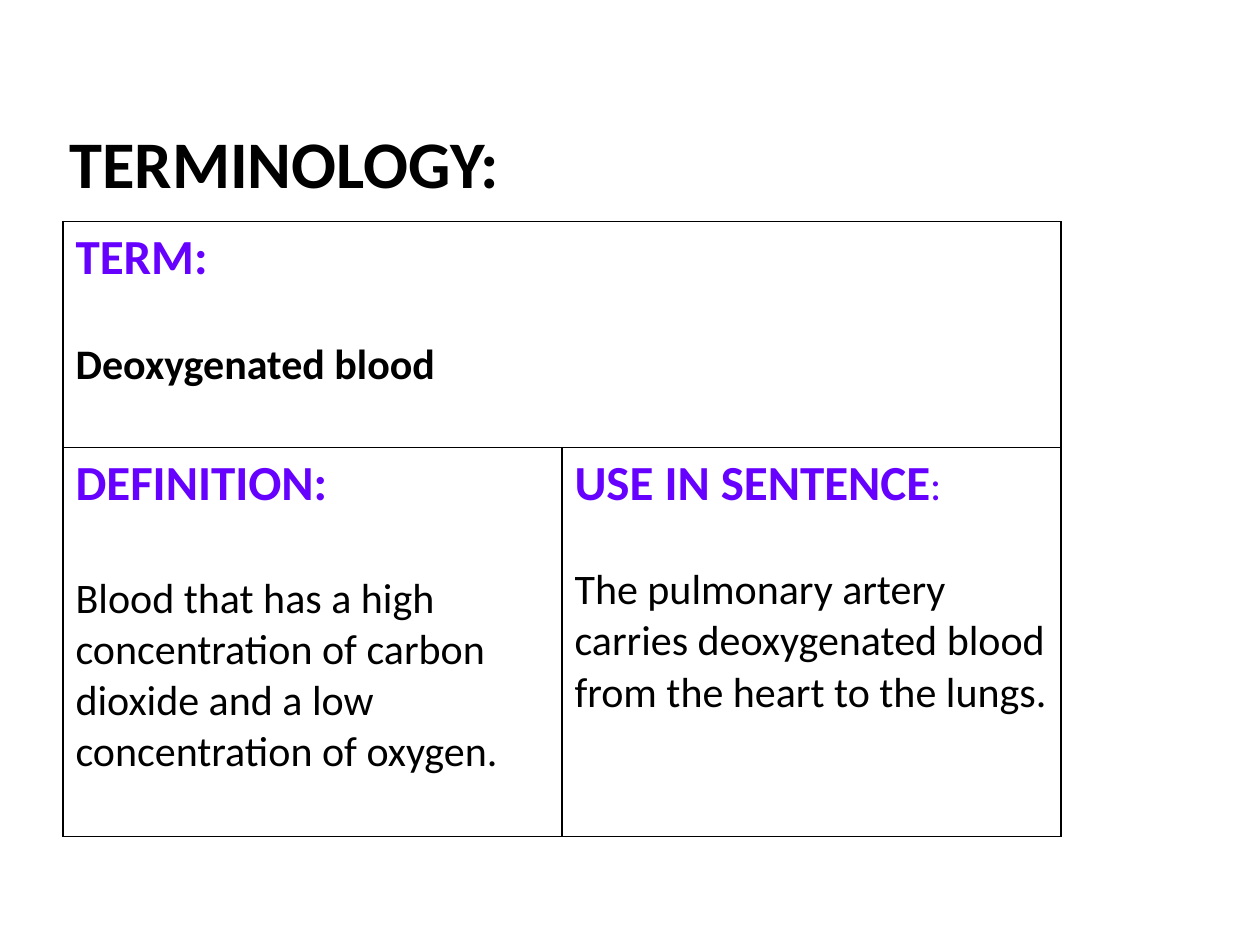
from dataclasses import dataclass

from lxml import etree
from pptx import Presentation
from pptx.dml.color import RGBColor
from pptx.enum.text import MSO_ANCHOR
from pptx.oxml.ns import qn
from pptx.util import Inches, Pt

BLACK = RGBColor(0x00, 0x00, 0x00)
VIOLET = RGBColor(0x66, 0x00, 0xFF)
FONT_NAME = "Calibri"
ANCHOR_BOTTOM = MSO_ANCHOR.BOTTOM

SLIDE_WIDTH, SLIDE_HEIGHT = Inches(10), Inches(7.5)
LEFT = Inches(0.5)
COLUMN_WIDTH = Inches(3.96)
CONTENT_WIDTH = 2 * COLUMN_WIDTH
TABLE_TOP = Inches(1.76)
ROW_HEIGHTS = (Inches(1.79), Inches(3.09))

HEADING = {"name": FONT_NAME, "size": Pt(28), "bold": True}
BODY = {"name": FONT_NAME, "size": Pt(24), "bold": False}


@dataclass(frozen=True)
class Entry:
    row: int
    column: int
    heading: str
    body: str
    gap: float
    body_bold: bool = False
    heading_tail: str = ""


ENTRIES = (
    Entry(0, 0, "TERM:", "Deoxygenated blood", 29.3, body_bold=True),
    Entry(1, 0, "DEFINITION:",
          "Blood that has a high concentration of carbon dioxide "
          "and a low concentration of oxygen.", 34.2),
    Entry(1, 1, "USE IN SENTENCE",
          "The pulmonary artery carries deoxygenated blood "
          "from the heart to the lungs.", 29.3, heading_tail=":"),
)


def add_run(paragraph, text: str, color: RGBColor, style: dict) -> None:
    run = paragraph.add_run()
    run.text = text
    for attribute, value in style.items():
        setattr(run.font, attribute, value)
    run.font.color.rgb = color


def add_title(slide) -> None:
    title = slide.shapes.add_textbox(LEFT, Inches(0.35), CONTENT_WIDTH, Inches(1.25))
    frame_format = {
        "word_wrap": True,
        "vertical_anchor": ANCHOR_BOTTOM,
        "margin_left": Inches(0.05),
        "margin_right": Inches(0.05),
        "margin_top": 0,
        "margin_bottom": 0,
    }
    for attribute, value in frame_format.items():
        setattr(title.text_frame, attribute, value)
    add_run(title.text_frame.paragraphs[0], "TERMINOLOGY:", BLACK,
            {**HEADING, "size": Pt(38)})


def outline_cell(cell) -> None:
    """Give the cell four black borders and no fill."""
    properties = cell._tc.get_or_add_tcPr()
    for side in ("a:lnL", "a:lnR", "a:lnT", "a:lnB"):
        border = etree.SubElement(properties, qn(side), w=str(Pt(1)))
        fill = etree.SubElement(border, qn("a:solidFill"))
        etree.SubElement(fill, qn("a:srgbClr"), val=str(BLACK))
    cell.fill.background()


def write_entry(cell, entry: Entry) -> None:
    heading = cell.text_frame.paragraphs[0]
    add_run(heading, entry.heading, VIOLET, HEADING)
    if entry.heading_tail:
        add_run(heading, entry.heading_tail, VIOLET, BODY)
    body = cell.text_frame.add_paragraph()
    body.space_before = Pt(entry.gap)
    add_run(body, entry.body, BLACK, {**BODY, "bold": entry.body_bold})


def add_term_table(slide) -> None:
    table = slide.shapes.add_table(
        len(ROW_HEIGHTS), 2, LEFT, TABLE_TOP, CONTENT_WIDTH, sum(ROW_HEIGHTS)
    ).table
    table.first_row = False
    table.horz_banding = False
    for column in table.columns:
        column.width = COLUMN_WIDTH
    for row, height in zip(table.rows, ROW_HEIGHTS):
        row.height = height
    for cell in table.iter_cells():
        outline_cell(cell)
    table.cell(0, 0).merge(table.cell(0, 1))
    for entry in ENTRIES:
        write_entry(table.cell(entry.row, entry.column), entry)


def main() -> None:
    presentation = Presentation()
    presentation.slide_width = SLIDE_WIDTH
    presentation.slide_height = SLIDE_HEIGHT
    slide = presentation.slides.add_slide(presentation.slide_layouts[6])
    add_title(slide)
    add_term_table(slide)
    presentation.save("out.pptx")


if __name__ == "__main__":
    main()
